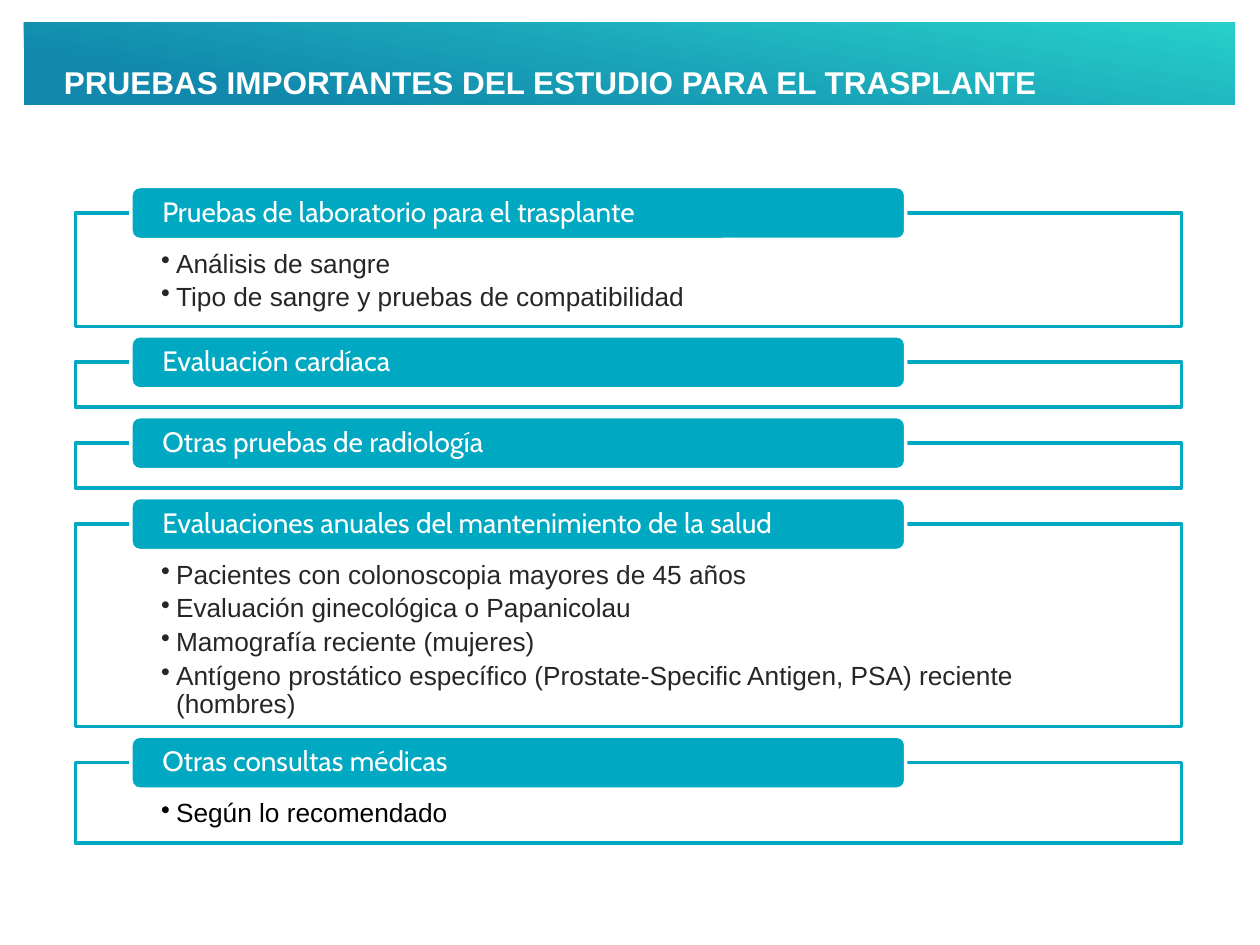
"""Build the slide on the tests in a transplant work-up."""
from lxml import etree
from pptx import Presentation
from pptx import util as u
from pptx.dml.color import RGBColor
from pptx.enum import shapes, text
from pptx.oxml.ns import qn

HUE = {"teal": "00A8C1", "deep": "1188AC", "mint": "27CFCA",
       "white": "FFFFFF", "ink": "262626", "black": "000000"}
TITLE = "PRUEBAS IMPORTANTES DEL ESTUDIO PARA EL TRASPLANTE"
PARTS = [
    ("Pruebas de laboratorio para el trasplante", 2.29, "ink",
     ["Análisis de sangre", "Tipo de sangre y pruebas de compatibilidad"]),
    ("Evaluación cardíaca", 0.91, "ink", []),
    ("Otras pruebas de radiología", 0.91, "ink", []),
    ("Evaluaciones anuales del mantenimiento de la salud", 4.09, "ink",
     ["Pacientes con colonoscopia mayores de 45 años",
      "Evaluación ginecológica o Papanicolau",
      "Mamografía reciente (mujeres)",
      "Antígeno prostático específico (Prostate-Specific Antigen, PSA) "
      "reciente (hombres)"]),
    ("Otras consultas médicas", 1.63, "black", ["Según lo recomendado"]),
]
TOP, GAP, RISE = 4.29, 0.72, 0.53
KIND = shapes.MSO_SHAPE


def rgb(name):
    return RGBColor.from_string(HUE[name])


def place(slide, kind, *spot):
    shape = slide.shapes.add_shape(kind, *map(u.Cm, spot))
    shape.shadow.inherit = False
    return shape


def paint(shape, fill, line):
    shape.fill.solid()
    shape.fill.fore_color.rgb = rgb(fill)
    shape.line.color.rgb = rgb(line)
    shape.line.width = u.Pt(2)


def inset(frame, side, top, base):
    frame.word_wrap = True
    frame.margin_left = frame.margin_right = u.Cm(side)
    frame.margin_top, frame.margin_bottom = u.Cm(top), u.Cm(base)


def style(para, face, size, hue, space):
    para.alignment = text.PP_ALIGN.LEFT
    para.line_spacing = space
    para.font.name, para.font.size = face, u.Pt(size)
    para.font.color.rgb = rgb(hue)


def add_title(slide):
    band = place(slide, KIND.RECTANGLE, 0.48, 0.46, 24.41, 1.65)
    band.line.fill.background()
    band.fill.gradient()
    band.fill.gradient_angle = 80
    for stop, (spot, hue) in zip(band.fill.gradient_stops,
                                 [(0.17, "deep"), (1, "mint")]):
        stop.position, stop.color.rgb = spot, rgb(hue)
    box = slide.shapes.add_textbox(*map(u.Cm, (1.04, 0.13, 21.67, 1.75)))
    box.text_frame.word_wrap = True
    para = box.text_frame.paragraphs[0]
    para.text = TITLE
    style(para, "Arial", 18, "white", u.Pt(50.6))
    para.font.bold = True


def add_body(slide, top, high, hue, items):
    box = place(slide, KIND.RECTANGLE, 1.52, top, 22.3, high)
    paint(box, "white", "teal")
    tint = box.fill._xPr.find(".//" + qn("a:srgbClr"))
    etree.SubElement(tint, qn("a:alpha"), val="90000")
    frame = box.text_frame
    inset(frame, 1.73, 0.76, 0.3)
    frame.vertical_anchor = text.MSO_ANCHOR.TOP
    for i, item in enumerate(items):
        para = frame.add_paragraph() if i else frame.paragraphs[0]
        para.text, para.level = item, 1
        props = para._p.get_or_add_pPr()
        props.set("marL", str(u.Cm(0.3)))
        props.set("indent", str(-u.Cm(0.3)))
        etree.SubElement(props, qn("a:buChar"), char="•")
        style(para, "Arial", 15, hue, 0.9)
        para.space_after = u.Pt(3)


def add_tab(slide, top, name):
    tab = place(slide, KIND.ROUNDED_RECTANGLE, 2.64, top, 15.62, 1.07)
    paint(tab, "teal", "white")
    frame = tab.text_frame
    inset(frame, 0.58, 0, 0)
    frame.vertical_anchor = text.MSO_ANCHOR.MIDDLE
    para = frame.paragraphs[0]
    para.text = name
    style(para, "Cabin", 16, "white", 0.9)


def main():
    deck = Presentation()
    deck.slide_width, deck.slide_height = u.Cm(25.4), u.Cm(19.05)
    slide = deck.slides.add_slide(deck.slide_layouts[6])
    add_title(slide)
    top = TOP
    for name, high, hue, items in PARTS:
        add_body(slide, top, high, hue, items)
        add_tab(slide, top - RISE, name)
        top += high + GAP
    deck.save("out.pptx")


if __name__ == "__main__":
    main()
